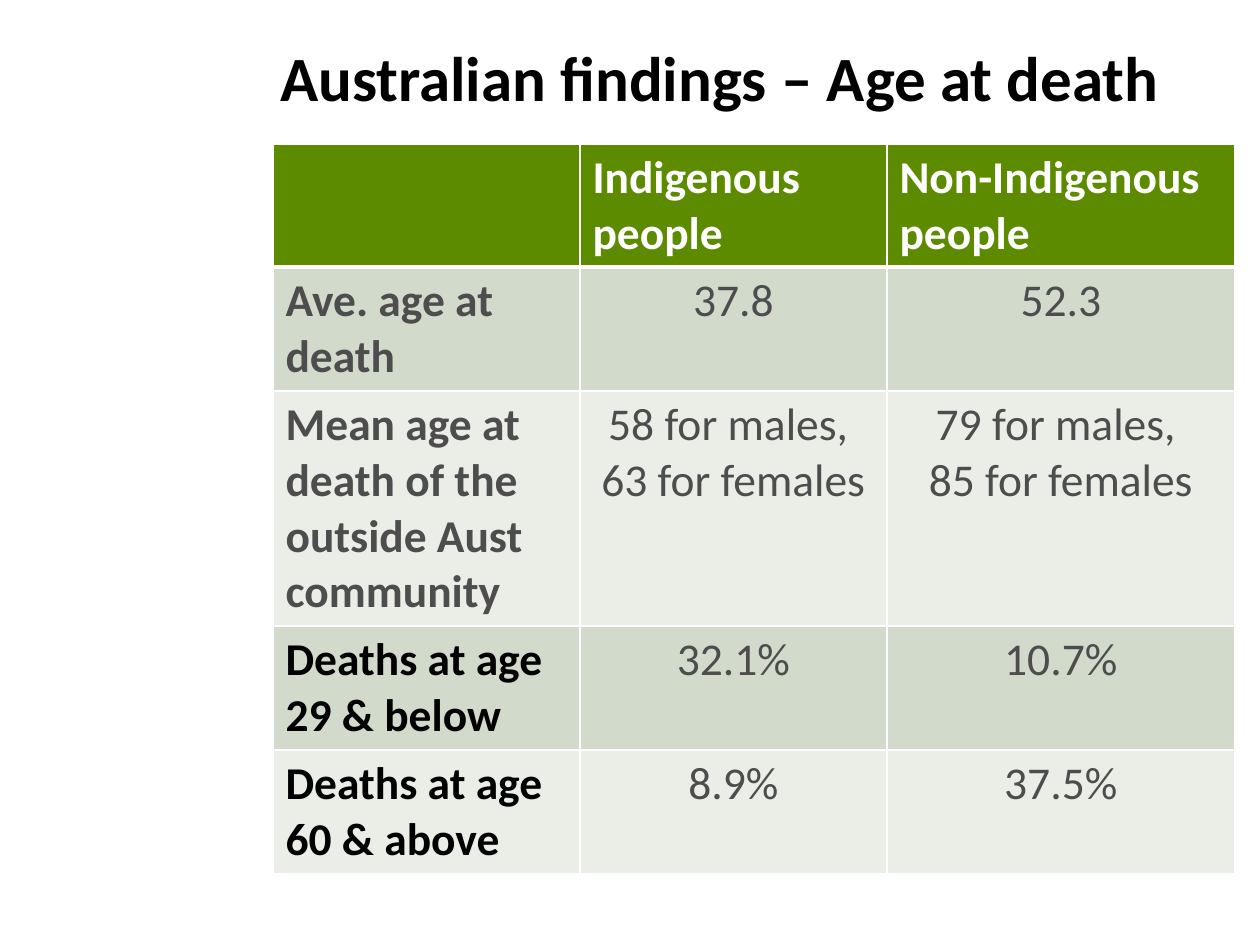
from lxml import etree
from pptx import Presentation
from pptx.dml.color import RGBColor
from pptx.enum.text import MSO_ANCHOR, PP_ALIGN
from pptx.oxml.ns import qn
from pptx.util import Emu, Pt

EMU_PER_PX = 914400 / 126
COLORS = {
    "white": "FFFFFF",
    "black": "000000",
    "gray": "4D4D4D",
    "header": "5D8B00",
    "band_dark": "D2DACC",
    "band_light": "EAEEE7",
}


def px(n):
    return Emu(round(n * EMU_PER_PX))


def write_text(tf, text, size=26, color="gray", bold=False, align=PP_ALIGN.LEFT):
    tf.word_wrap = True
    for i, line in enumerate(text.split("\n")):
        p = tf.paragraphs[0] if i == 0 else tf.add_paragraph()
        p.alignment = align
        r = p.add_run()
        r.text = line
        r.font.name = "Calibri"
        r.font.size = Pt(size)
        r.font.bold = bold
        r.font.color.rgb = RGBColor.from_string(COLORS[color])


prs = Presentation()
prs.slide_width, prs.slide_height = px(1260), px(945)
s = prs.slides.add_slide(prs.slide_layouts[6])

# Title
tf = s.shapes.add_textbox(px(268), px(27), px(955), px(98)).text_frame
tf.vertical_anchor = MSO_ANCHOR.MIDDLE
write_text(tf, "Australian findings – Age at death", size=36, color="black", bold=True)

# Table grid
rows = [
    ["", "Indigenous people", "Non-Indigenous people"],
    ["Ave. age at death", "37.8", "52.3"],
    ["Mean age at death of the outside Aust community",
     "58 for males, \n63 for females", "79 for males, \n85 for females"],
    ["Deaths at age 29 & below", "32.1%", "10.7%"],
    ["Deaths at age 60 & above", "8.9%", "37.5%"],
]
col_widths = [307, 307, 348]
row_heights = [123, 124, 235, 124, 124]
table = s.shapes.add_table(len(rows), len(col_widths), px(273), px(144),
                           px(sum(col_widths)), px(sum(row_heights))).table
for col, width in zip(table.columns, col_widths):
    col.width = px(width)
for row, height in zip(table.rows, row_heights):
    row.height = px(height)

# Cells: header row, bold row labels, centred values
for i, row in enumerate(rows):
    fill = "header" if i == 0 else "band_dark" if i % 2 else "band_light"
    for j, text in enumerate(row):
        cell = table.cell(i, j)
        color = "white" if i == 0 else "black" if j == 0 and i > 2 else "gray"
        is_label = i == 0 or j == 0
        if text:
            write_text(cell.text_frame, text, color=color, bold=is_label,
                       align=PP_ALIGN.LEFT if is_label else PP_ALIGN.CENTER)

        # White borders, thicker under the header
        tcPr = cell._tc.get_or_add_tcPr()
        for side in ("lnL", "lnR", "lnT", "lnB"):
            thick = (i, side) in ((0, "lnB"), (1, "lnT"))
            ln = etree.SubElement(tcPr, qn(f"a:{side}"), w=str(Pt(3 if thick else 1)))
            line_fill = etree.SubElement(ln, qn("a:solidFill"))
            etree.SubElement(line_fill, qn("a:srgbClr"), val=COLORS["white"])
        cell.fill.solid()
        cell.fill.fore_color.rgb = RGBColor.from_string(COLORS[fill])

prs.save("out.pptx")
